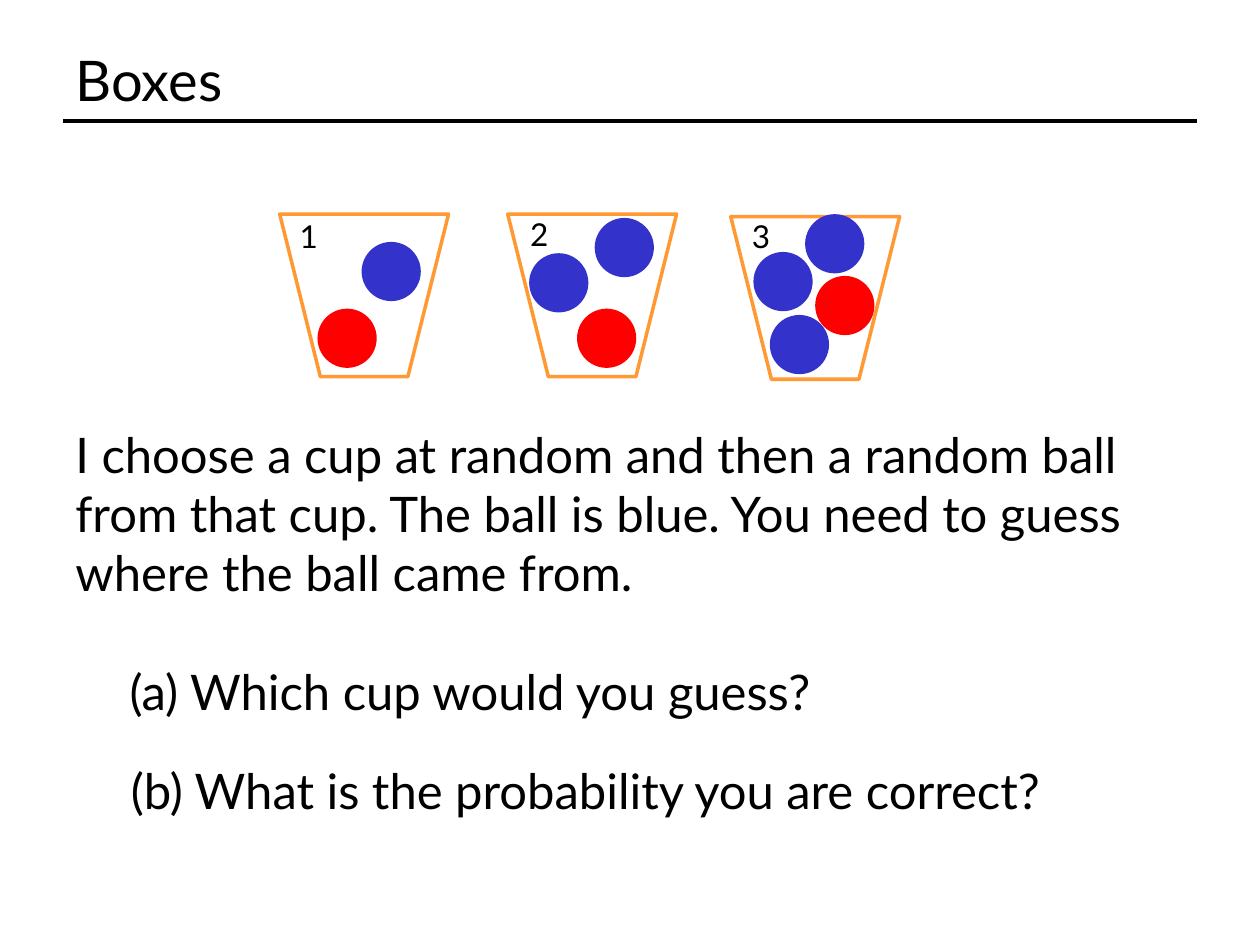
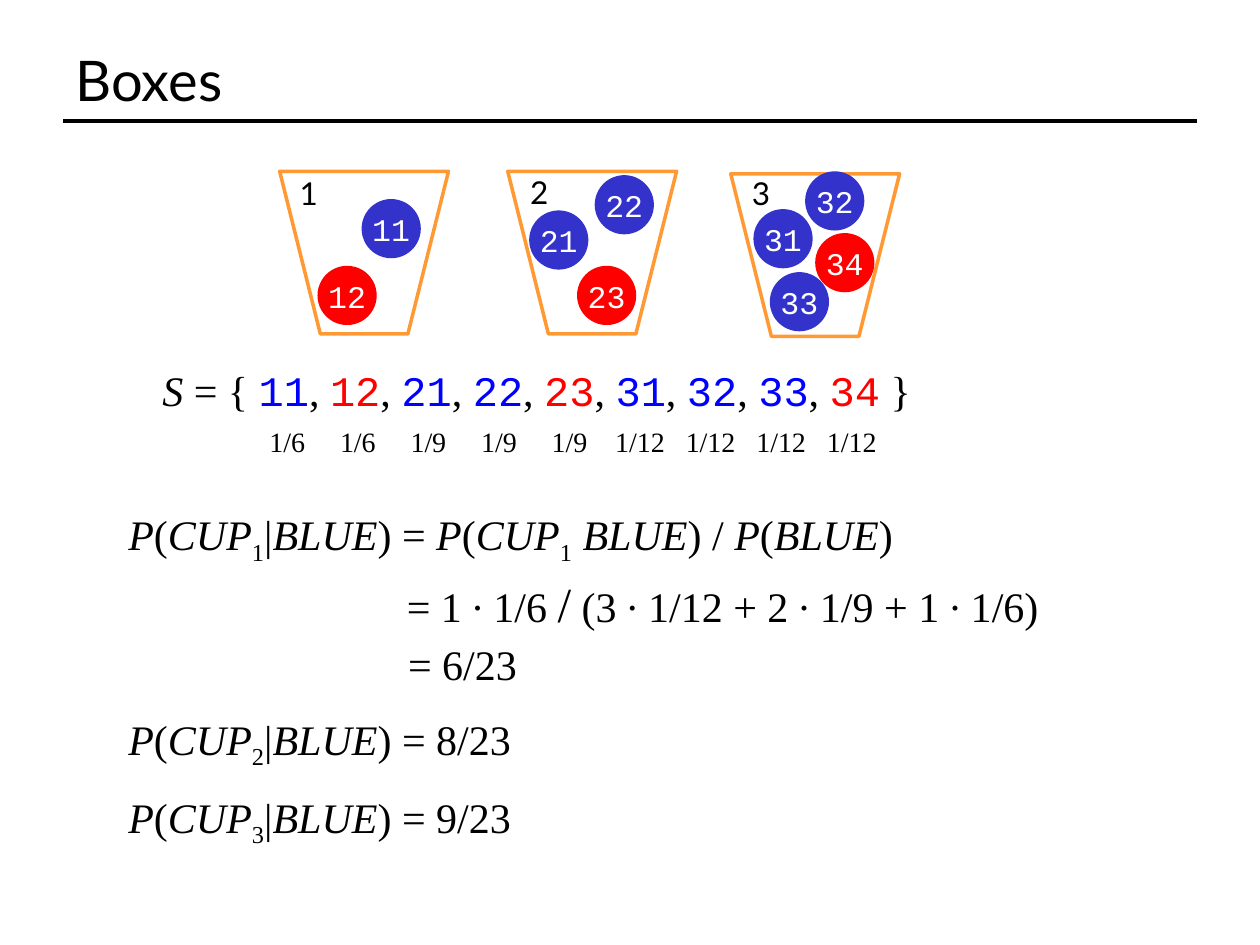
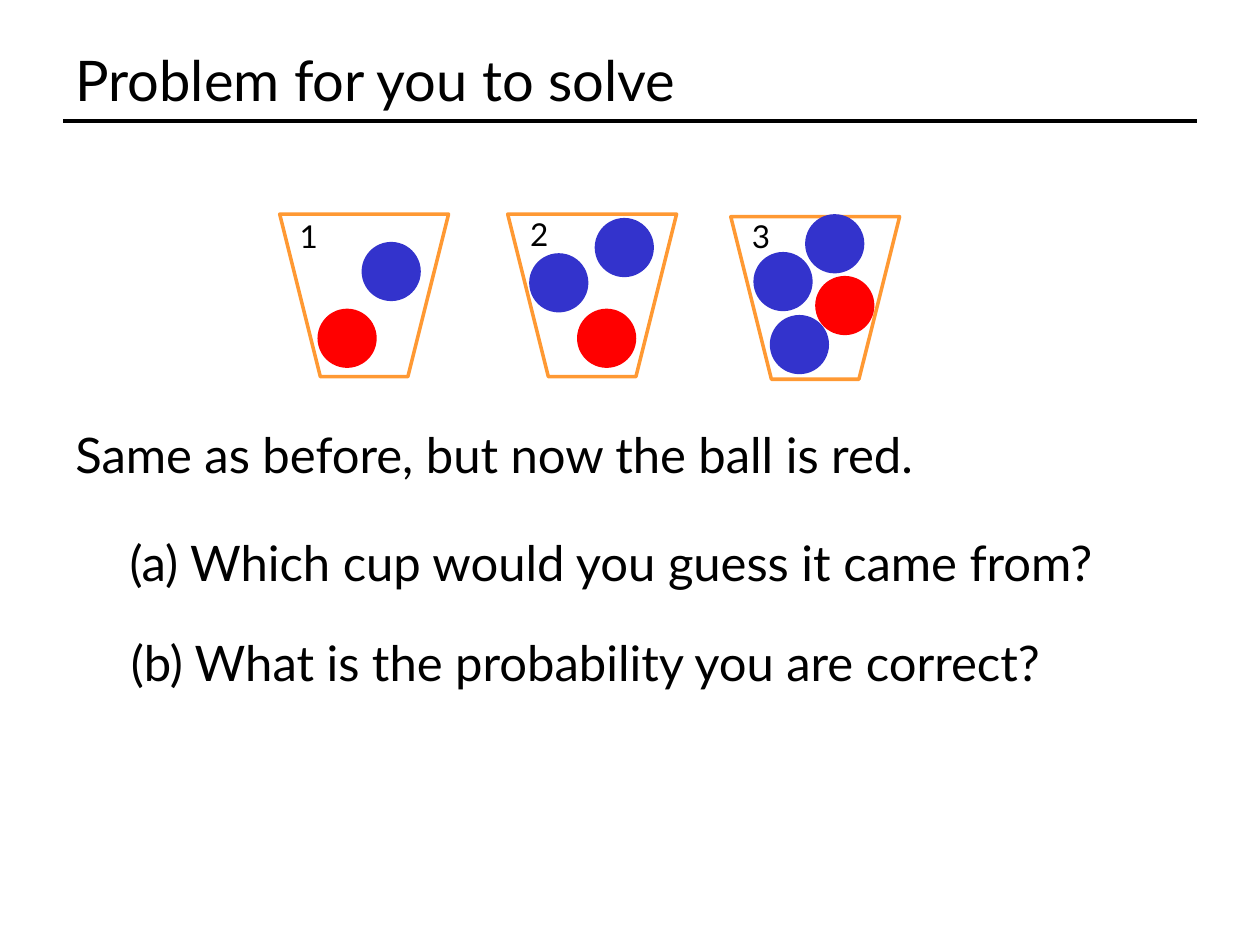
"""Build three slides on guessing which cup a random ball came from."""
from lxml import etree
from pptx import Presentation
from pptx.dml.color import RGBColor
from pptx.enum.shapes import MSO_CONNECTOR, MSO_SHAPE
from pptx.enum.text import MSO_ANCHOR, PP_ALIGN
from pptx.oxml.ns import qn
from pptx.util import Inches, Pt

STRAIGHT = MSO_CONNECTOR.STRAIGHT
TRAPEZOID, OVAL = MSO_SHAPE.TRAPEZOID, MSO_SHAPE.OVAL
TOP, MIDDLE = MSO_ANCHOR.TOP, MSO_ANCHOR.MIDDLE
LEFT, CENTER = PP_ALIGN.LEFT, PP_ALIGN.CENTER


class Theme:
    black = RGBColor.from_string("000000")
    white = RGBColor.from_string("FFFFFF")
    cup = RGBColor.from_string("FF9933")
    ball = {"blue": RGBColor.from_string("3333CC"), "red": RGBColor.from_string("FF0000")}
    outcome = {"blue": RGBColor.from_string("0000FF"), "red": RGBColor.from_string("FF0000")}
    sans, serif, mono = "Lato", "Times New Roman", "Courier New"
    title, body, formula, label, fraction = 32, 28, 24, 18, 16
    line = Pt(2)


def write(text_frame, segments, size, font, color=Theme.black, align=LEFT, anchor=TOP, wrap=False):
    text_frame.word_wrap = wrap
    text_frame.vertical_anchor = anchor
    paragraph = text_frame.paragraphs[0]
    paragraph.alignment = align
    for text, style in segments:
        run = paragraph.add_run()
        run.text = text
        run.font.name = font
        run.font.size = Pt(size)
        run.font.color.rgb = color
        if style == "variable":
            run.font.italic = True
        elif style == "index":
            run._r.get_or_add_rPr().set("baseline", "-25000")
        elif style == "large":
            run.font.size = Pt(Theme.body)
        elif style in Theme.outcome:
            run.font.name = Theme.mono
            run.font.color.rgb = Theme.outcome[style]


def add_text(shapes, left, top, width, height, segments, size, font, **options):
    box = shapes.add_textbox(Inches(left), Inches(top), Inches(width), Inches(height))
    write(box.text_frame, segments, size, font, **options)


CUP_WIDTH, CUP_HEIGHT, NUMBER_SIZE, BALL_SIZE = 1.34, 1.29, 0.5, 0.47
CUPS = [
    (2.22, 1.7, 2.2, 1.62, [("blue", 2.87, 1.92), ("red", 2.52, 2.45)]),
    (4.03, 1.7, 4.03, 1.61, [("blue", 4.2, 2.01), ("blue", 4.72, 1.73), ("red", 4.58, 2.45)]),
    (5.8, 1.72, 5.79, 1.62,
     [("blue", 5.98, 2), ("blue", 6.39, 1.7), ("blue", 6.11, 2.5), ("red", 6.47, 2.19)]),
]
CORRECT = "(b) What is the probability you are correct?"
SLIDES = [
    ("Boxes", 0, False, [
        (0.5, 3.32, 9, 1.51, "I choose a cup at random and then a random ball from that cup. "
         "The ball is blue. You need to guess where the ball came from."),
        (0.93, 5.2, 7.69, 0.57, "(a) Which cup would you guess?"),
        (0.94, 5.99, 8.1, 0.57, CORRECT)]),
    ("Boxes", -0.34, True, []),
    ("Problem for you to solve", 0, False, [
        (0.5, 3.32, 9, 0.57, "Same as before, but now the ball is red."),
        (0.93, 4.18, 8.35, 0.57, "(a) Which cup would you guess it came from?"),
        (0.94, 4.97, 8.1, 0.57, CORRECT)]),
]

presentation = Presentation()
presentation.slide_width, presentation.slide_height = Inches(10), Inches(7.5)

for title, cup_shift, labelled, lines in SLIDES:
    slide = presentation.slides.add_slide(presentation.slide_layouts[6])
    rule = slide.shapes.add_connector(STRAIGHT, Inches(0.5), Inches(0.96), Inches(9.5), Inches(0.96))
    rule.line.color.rgb = Theme.black
    rule.line.width = Theme.line
    etree.SubElement(rule._element.spPr, qn("a:effectLst"))
    add_text(slide.shapes, 0.5, 0.3, 9, 0.66, [(title, "plain")], Theme.title, Theme.sans,
             anchor=MIDDLE, wrap=True)

    for number, (left, top, number_left, number_top, balls) in enumerate(CUPS, 1):
        cup = slide.shapes.add_shape(TRAPEZOID, Inches(left), Inches(top + cup_shift),
                                     Inches(CUP_WIDTH), Inches(CUP_HEIGHT))
        cup._element.spPr.xfrm.set("flipV", "1")
        cup.shadow.inherit = False
        cup.fill.background()
        cup.line.color.rgb = Theme.cup
        cup.line.width = Theme.line
        for position, (color, ball_left, ball_top) in enumerate(balls, 1):
            ball = slide.shapes.add_shape(OVAL, Inches(ball_left), Inches(ball_top + cup_shift),
                                          Inches(BALL_SIZE), Inches(BALL_SIZE))
            ball.shadow.inherit = False
            ball.fill.solid()
            ball.fill.fore_color.rgb = Theme.ball[color]
            ball.line.fill.background()
            if labelled:
                write(ball.text_frame, [(f"{number}{position}", "plain")], Theme.label, Theme.mono,
                      color=Theme.white, align=CENTER, anchor=MIDDLE)
        add_text(slide.shapes, number_left, number_top + cup_shift, NUMBER_SIZE, NUMBER_SIZE,
                 [(str(number), "plain")], Theme.label, Theme.sans, align=CENTER, anchor=MIDDLE)

    for left, top, width, height, text in lines:
        add_text(slide.shapes, left, top, width, height, [(text, "plain")], Theme.body, Theme.sans,
                 wrap=True)

solution = presentation.slides[1].shapes
sample_space = [("S", "variable"), (" = { ", "plain")]
fractions = []
for number, cup in enumerate(CUPS, 1):
    balls = cup[-1]
    for position, ball in enumerate(balls, 1):
        if fractions:
            sample_space.append((", ", "plain"))
        sample_space.append((f"{number}{position}", ball[0]))
        fractions.append(f"1/{len(CUPS) * len(balls)}")
sample_space.append((" }", "plain"))
add_text(solution, 1.19, 2.84, 6.17, 0.5, sample_space, Theme.formula, Theme.serif)

fraction_row = solution.add_group_shape().shapes
for index, fraction in enumerate(fractions):
    width = 0.52 if len(fraction) == 3 else 0.63
    add_text(fraction_row, 2.28 + 0.56 * index - width / 2, 3.32, width, 0.37,
             [(fraction, "plain")], Theme.fraction, Theme.serif, align=CENTER)

joint_over_blue = [
    (") = ", "plain"), ("P", "variable"), ("(", "plain"), ("CUP", "variable"), ("1", "index"),
    (" ", "plain"), ("BLUE", "variable"), (") / ", "plain"), ("P", "variable"), ("(", "plain"),
    ("BLUE", "variable"), (")", "plain"),
]
posteriors = [
    (3.99, 6.55, joint_over_blue),
    (5.61, 3.41, [(") = 8/23", "plain")]),
    (6.23, 3.41, [(") = 9/23", "plain")]),
]
for number, (top, width, value) in enumerate(posteriors, 1):
    conditional = [("P", "variable"), ("(", "plain"), ("CUP", "variable"), (str(number), "index"),
                   ("|", "plain"), ("BLUE", "variable")]
    add_text(solution, 0.92, top, width, 0.5, conditional + value, Theme.formula, Theme.serif)

add_text(solution, 3.13, 4.5, 5.72, 0.57,
         [("= 1 ∙ 1/6 ", "plain"), ("/", "large"), (" (3 ∙ 1/12 + 2 ∙ 1/9 + 1 ∙ 1/6)", "plain")],
         Theme.formula, Theme.serif)
add_text(solution, 3.14, 5.02, 1.15, 0.5, [("= 6/23", "plain")], Theme.formula, Theme.serif)

presentation.save("out.pptx")
